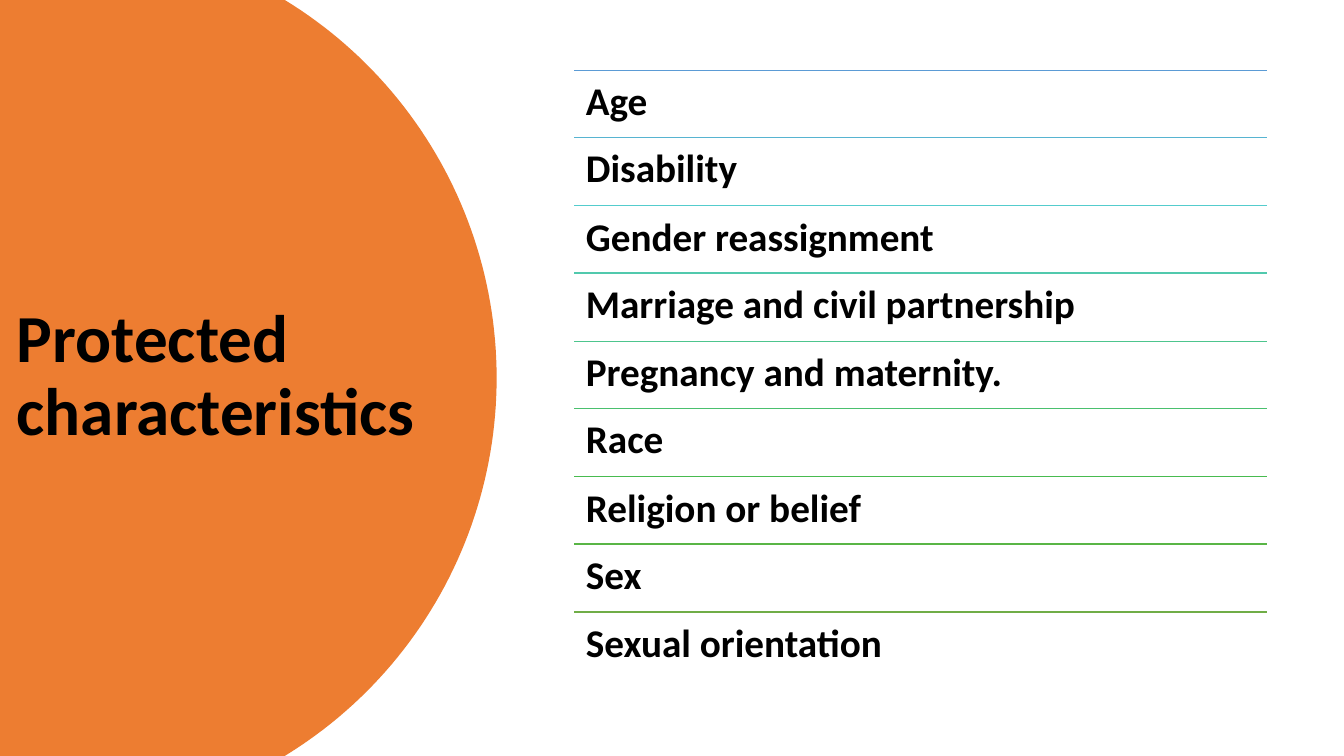
from math import asin, cos, sin

from lxml.etree import SubElement
from pptx import Presentation
from pptx.dml.color import RGBColor
from pptx.enum.shapes import MSO_CONNECTOR
from pptx.enum.text import MSO_ANCHOR
from pptx.oxml.ns import qn
from pptx.util import Pt

PX = 9525  # EMU per pixel, 96 pixels to the inch
THEME = {
    "font": "Calibri",
    "text": "000000",
    "panel": "ED7D31",
    "title_size": 48,
    "item_size": 28,
    "rule_width": 1,
}
CHARACTERISTICS = [
    ("Age", "5B9BD5"),
    ("Disability", "57B4D1"),
    ("Gender reassignment", "54CCCD"),
    ("Marriage and civil partnership", "51C9AD"),
    ("Pregnancy and maternity.", "4DC58D"),
    ("Race", "4AC06E"),
    ("Religion or belief", "48BB4F"),
    ("Sex", "59B546"),
    ("Sexual orientation", "70AD47"),
]
SLIDE_W, SLIDE_H = 1280, 720
ARC_X, ARC_R, ARC_STEPS = 51, 422, 96
LIST_X, LIST_Y, LIST_W, LIST_H = 547, 67, 660, 581


def add_text(slide, text, box, size, inset, anchor):
    """Add a bold text box; box is left, top, width, height in px."""
    tf = slide.shapes.add_textbox(*(v * PX for v in box)).text_frame
    frame_format = {"word_wrap": True, "vertical_anchor": anchor}
    for side in ("left", "top", "right", "bottom"):
        frame_format[f"margin_{side}"] = inset * PX
    for name, value in frame_format.items():
        setattr(tf, name, value)
    p = tf.paragraphs[0]
    p.line_spacing = 0.9
    r = p.add_run()
    r.text = text
    font_format = {"name": THEME["font"], "size": Pt(size), "bold": True}
    for name, value in font_format.items():
        setattr(r.font, name, value)
    r.font.color.rgb = RGBColor.from_string(THEME["text"])


prs = Presentation()
prs.slide_width, prs.slide_height = SLIDE_W * PX, SLIDE_H * PX
slide = prs.slides.add_slide(prs.slide_layouts[6])

# Panel whose right edge is a circular arc
half = asin(SLIDE_H / 2 / ARC_R)
angles = [half * (2 * i / ARC_STEPS - 1) for i in range(ARC_STEPS + 1)]
arc = [
    (round((ARC_X + ARC_R * cos(a)) * PX), round((SLIDE_H / 2 + ARC_R * sin(a)) * PX))
    for a in angles
]
builder = slide.shapes.build_freeform(0, 0)
builder.add_line_segments(arc + [(0, SLIDE_H * PX)], close=True)
panel = builder.convert_to_shape()
panel.shadow.inherit = False
panel.fill.solid()
panel.fill.fore_color.rgb = RGBColor.from_string(THEME["panel"])
panel.line.fill.background()

add_text(slide, "Protected characteristics", (6, 67, 417, 585),
         THEME["title_size"], 10, MSO_ANCHOR.MIDDLE)

# Ruled list
row_h = LIST_H // len(CHARACTERISTICS)
for i, (label, color) in enumerate(CHARACTERISTICS):
    y = LIST_Y + i * LIST_H // len(CHARACTERISTICS)
    rule = slide.shapes.add_connector(
        MSO_CONNECTOR.STRAIGHT, LIST_X * PX, y * PX, (LIST_X + LIST_W) * PX, y * PX)
    rule.line.color.rgb = RGBColor.from_string(color)
    rule.line.width = Pt(THEME["rule_width"])
    SubElement(rule._element.spPr, qn("a:effectLst"))
    add_text(slide, label, (LIST_X, y, LIST_W, row_h),
             THEME["item_size"], 11, MSO_ANCHOR.TOP)

prs.save("out.pptx")
